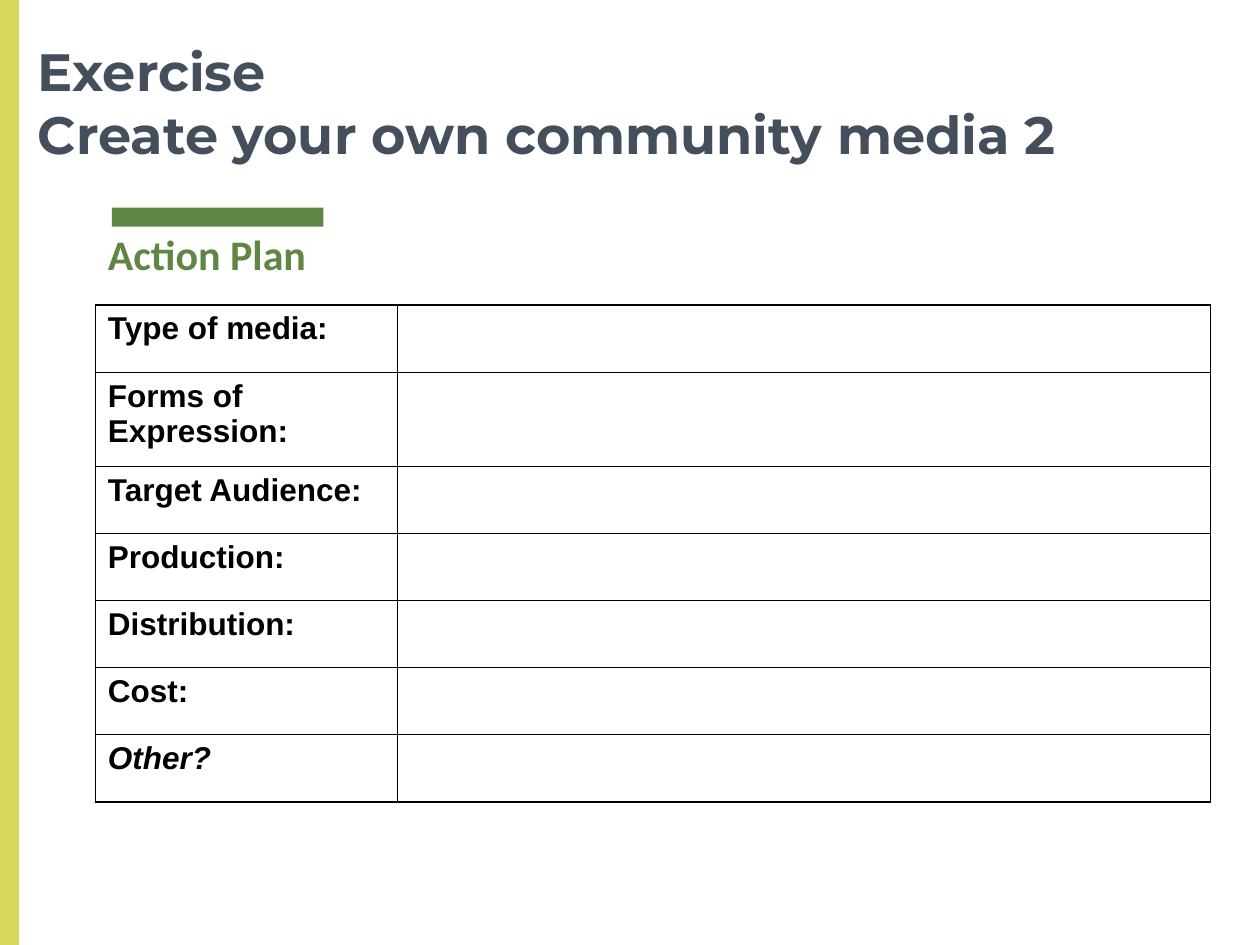
from pptx import Presentation
from pptx.dml.color import RGBColor
from pptx.enum.shapes import MSO_SHAPE as SHAPE
from pptx.enum.text import MSO_ANCHOR as ANCHOR, MSO_AUTO_SIZE as AUTO, PP_ALIGN as ALIGN
from pptx.oxml import parse_xml
from pptx.oxml.ns import nsdecls
from pptx.util import Pt

# Content
TITLE = ["Exercise", "Create your own community media 2"]
HEADING = "Action Plan"
ROWS = [  # label, height, italic
    ("Type of media:", 38.4, False),
    ("Forms of Expression:", 53.7, False),
    ("Target Audience:", 38.4, False),
    ("Production:", 38.4, False),
    ("Distribution:", 38.4, False),
    ("Cost:", 38.4, False),
    ("Other?", 38.4, True),
]
COL_WIDTHS = [172.6, 464.6]

SLATE = RGBColor(0x45, 0x4F, 0x5B)
GREEN = RGBColor(0x60, 0x86, 0x43)
LIME = RGBColor(0xD5, 0xD8, 0x5A)
BLACK = RGBColor(0, 0, 0)


def add_bar(s, x, y, w, h, color):
    bar = s.shapes.add_shape(SHAPE.RECTANGLE, Pt(x), Pt(y), Pt(w), Pt(h))
    bar.shadow.inherit = False
    bar.fill.solid()
    bar.fill.fore_color.rgb = color
    bar.line.fill.background()


def place(sp, x, y, w, h, anchor):
    sp.left, sp.top, sp.width, sp.height = Pt(x), Pt(y), Pt(w), Pt(h)
    tf = sp.text_frame
    tf.word_wrap = True
    tf.auto_size = AUTO.NONE
    tf.vertical_anchor = anchor
    tf.margin_left = tf.margin_right = tf.margin_top = tf.margin_bottom = Pt(7.2)
    p = tf.paragraphs[0]
    p.alignment = ALIGN.LEFT
    p.space_before = Pt(0)
    return p


def add_run(p, text, font, size, color, italic=False):
    r = p.add_run()
    r.text = text
    r.font.name, r.font.size = font, Pt(size)
    r.font.bold, r.font.italic = True, italic
    r.font.color.rgb = color


def add_borders(cell):
    pr = cell._tc.get_or_add_tcPr()
    for i, side in enumerate(("lnL", "lnR", "lnT", "lnB")):
        pr.insert(i, parse_xml(
            f'<a:{side} {nsdecls("a")} w="{Pt(0.75)}"><a:solidFill>'
            f'<a:srgbClr val="{BLACK}"/></a:solidFill></a:{side}>'))


prs = Presentation()
prs.slide_width, prs.slide_height = Pt(720), Pt(540)
s = prs.slides.add_slide(prs.slide_layouts[1])

# Accent bars
add_bar(s, 64, 118.6, 120.8, 11, GREEN)
add_bar(s, 0, 0, 10.8, 540, LIME)

# Title
p = place(s.shapes.title, 14.4, 0, 651.6, 101.5, ANCHOR.BOTTOM)
for i, line in enumerate(TITLE):
    if i:
        p.add_line_break()
    add_run(p, line, "Montserrat", 30, SLATE)

# Heading, without a bullet
p = place(s.placeholders[1], 54.5, 123.2, 611.3, 361.4, ANCHOR.TOP)
pPr = p._p.get_or_add_pPr()
pPr.set("marL", "0")
pPr.set("indent", "0")
pPr.append(parse_xml(f'<a:buNone {nsdecls("a")}/>'))
add_run(p, HEADING, "Calibri", 24, GREEN)

# Action plan table
table = s.shapes.add_table(
    len(ROWS), len(COL_WIDTHS), Pt(54.5), Pt(174.3),
    Pt(sum(COL_WIDTHS)), Pt(sum(h for _, h, _ in ROWS))).table
table.first_row = table.horz_banding = False
for col, width in zip(table.columns, COL_WIDTHS):
    col.width = Pt(width)
for row, (label, height, italic) in zip(table.rows, ROWS):
    row.height = Pt(height)
    for cell in row.cells:
        cell.fill.background()
        add_borders(cell)
    add_run(row.cells[0].text_frame.paragraphs[0], label, "Arial", 18, BLACK, italic)

prs.save("out.pptx")
